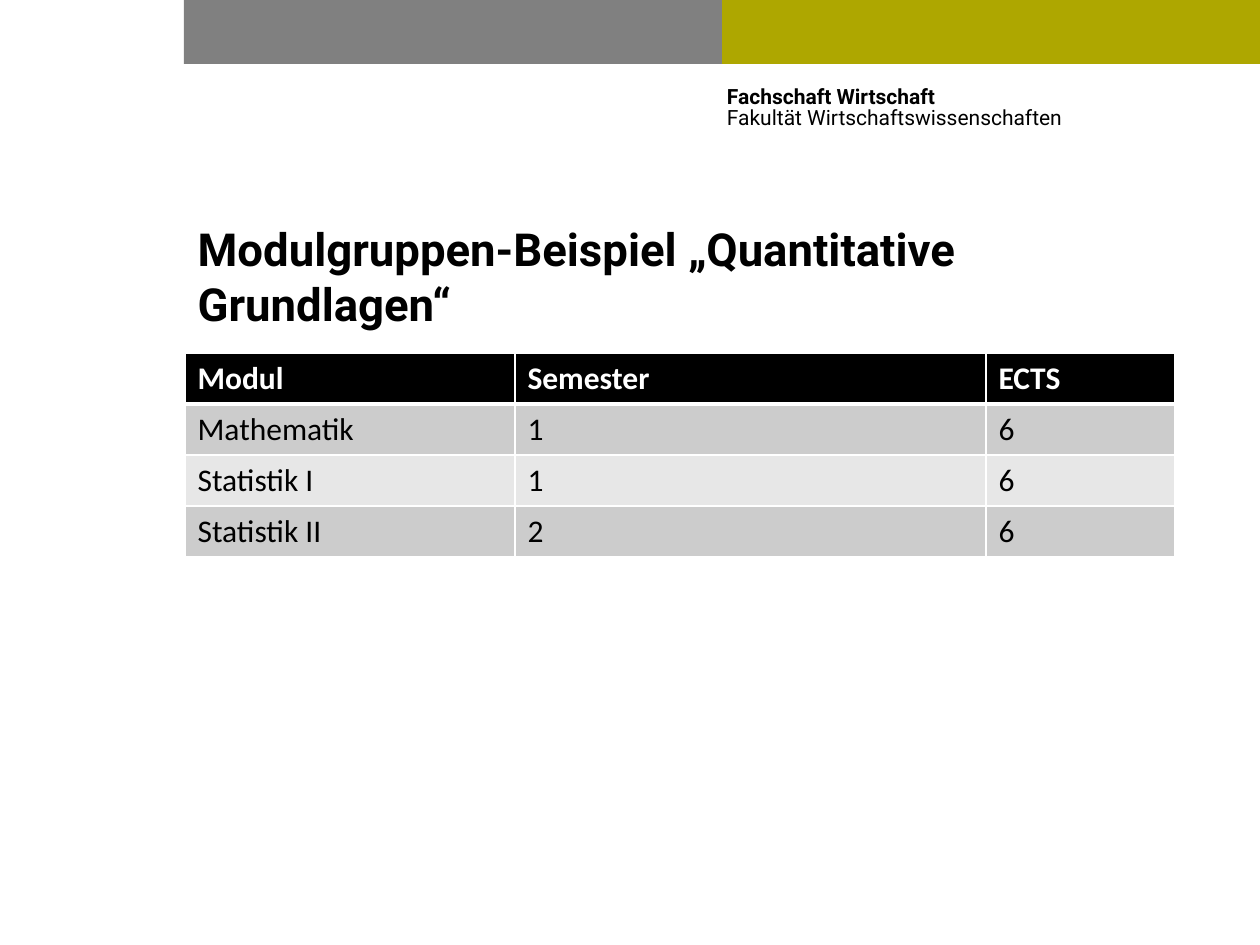
from lxml import etree
from pptx import Presentation
from pptx import util as u
from pptx.dml.color import RGBColor
from pptx.enum import shapes, text
from pptx.oxml.ns import qn

HUES = {
    "gray": "808080", "olive": "AEA700", "black": "000000",
    "white": "FFFFFF", "dark": "CCCCCC", "light": "E7E7E7",
}
ROWS = [
    ("Modul", "Semester", "ECTS"),
    ("Mathematik", "1", "6"),
    ("Statistik I", "1", "6"),
    ("Statistik II", "2", "6"),
]
COLS = [330, 471, 189]
HIGH = 51


def px(n):
    return u.Inches(n / 126)


def hue(name):
    return RGBColor.from_string(HUES[name])


def style(par, face, size, color, bold):
    par.font.name = face
    par.font.size = u.Pt(size)
    par.font.bold = bold
    par.font.color.rgb = hue(color)


def bar(slide, left, width, color):
    box = slide.shapes.add_shape(
        shapes.MSO_SHAPE.RECTANGLE, px(left), 0, px(width), px(64))
    box.shadow.inherit = False
    box.fill.solid()
    box.fill.fore_color.rgb = hue(color)
    box.line.fill.background()


def label(slide, lines):
    box = slide.shapes.add_textbox(px(727), px(88), px(484), px(69))
    frame = box.text_frame
    frame.word_wrap = True
    frame.margin_left = frame.margin_right = 0
    frame.margin_top = frame.margin_bottom = 0
    frame.text = "\n".join(lines)
    for i, par in enumerate(frame.paragraphs):
        par.line_spacing = u.Pt(12)
        style(par, "Roboto", 12, "black", i == 0)


def title(slide, words):
    head = slide.shapes.title
    head.left, head.top = px(185), px(228)
    head.width, head.height = px(990), px(96)
    frame = head.text_frame
    frame.text = words
    frame.word_wrap = True
    frame.auto_size = text.MSO_AUTO_SIZE.NONE
    frame.vertical_anchor = text.MSO_ANCHOR.MIDDLE
    par = frame.paragraphs[0]
    par.alignment = text.PP_ALIGN.LEFT
    style(par, "Roboto", 26, "black", True)


def edge(cell, side, width):
    prop = cell._tc.get_or_add_tcPr()
    line = etree.SubElement(prop, qn("a:ln" + side), w=str(u.Pt(width)))
    fill = etree.SubElement(line, qn("a:solidFill"))
    etree.SubElement(fill, qn("a:srgbClr"), val=HUES["white"])


def grid(slide):
    table = slide.shapes.add_table(
        len(ROWS), len(COLS), px(185), px(353),
        px(sum(COLS)), px(HIGH * len(ROWS))).table
    for col, width in zip(table.columns, COLS):
        col.width = px(width)
    for r, row in enumerate(ROWS):
        table.rows[r].height = px(HIGH)
        top = r == 0
        back = "black" if top else "dark" if r % 2 else "light"
        for c, words in enumerate(row):
            cell = table.cell(r, c)
            cell.text = words
            for side in "LRTB":
                thick = (r, side) in ((0, "B"), (1, "T"))
                edge(cell, side, 3 if thick else 1)
            cell.fill.solid()
            cell.fill.fore_color.rgb = hue(back)
            style(cell.text_frame.paragraphs[0], "Calibri", 18,
                  "white" if top else "black", top)


def main():
    deck = Presentation()
    deck.slide_width, deck.slide_height = px(1260), px(945)
    slide = deck.slides.add_slide(deck.slide_layouts[5])
    for i, color in enumerate(("gray", "olive")):
        bar(slide, 184 + 538 * i, 538, color)
    label(slide, ["Fachschaft Wirtschaft", "Fakultät Wirtschaftswissenschaften"])
    title(slide, "Modulgruppen-Beispiel „Quantitative Grundlagen“")
    grid(slide)
    deck.save("out.pptx")


if __name__ == "__main__":
    main()
